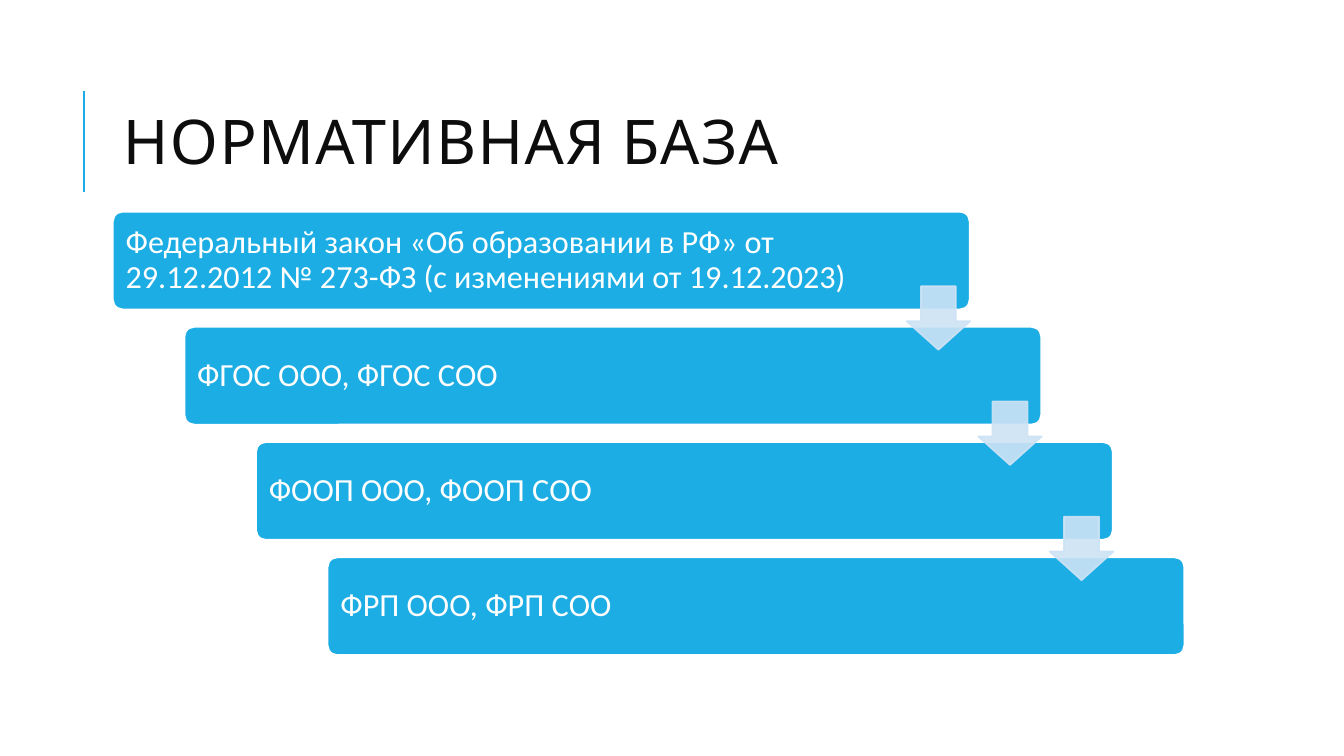
from dataclasses import dataclass

from lxml.etree import SubElement
from pptx import Presentation
from pptx.dml.color import RGBColor
from pptx.enum.shapes import MSO_CONNECTOR, MSO_SHAPE
from pptx.enum.text import MSO_ANCHOR, PP_ALIGN
from pptx.oxml.ns import qn
from pptx.util import Inches, Pt

COLORS = {"accent": "1CADE4", "white": "FFFFFF", "title": "0D0D0D", "arrow": "CDE3F5"}
TITLE = "НОРМАТИВНАЯ БАЗА"
DOCUMENTS = [
    "Федеральный закон «Об образовании в РФ» от 29.12.2012 № 273-ФЗ (с изменениями от 19.12.2023)",
    "ФГОС ООО, ФГОС СОО",
    "ФООП ООО, ФООП СОО",
    "ФРП ООО, ФРП СОО",
]


@dataclass(frozen=True)
class Staircase:
    """Grid in inches: every step moves one column right and one row down."""
    left: float = 1.12
    top: float = 2.1
    column: float = 0.71
    row: float = 1.143
    box_width: float = 8.5
    box_height: float = 0.97
    arrow_size: float = 0.63
    arrow_dx: float = 7.875
    arrow_dy: float = 0.74


@dataclass(frozen=True)
class Step:
    index: int
    text: str


def color(name: str) -> RGBColor:
    return RGBColor.from_string(COLORS[name])


def add_figure(page, kind, left: float, top: float, width: float, height: float,
               *, fill: str, line: str, adjustments: list[float]):
    shape = page.shapes.add_shape(kind, Inches(left), Inches(top), Inches(width), Inches(height))
    shape.shadow.inherit = False
    shape.fill.solid()
    shape.fill.fore_color.rgb = color(fill)
    shape.line.color.rgb = color(line)
    shape.line.width = Pt(1.25)
    for position, value in enumerate(adjustments):
        shape.adjustments[position] = value
    return shape


def write(frame, text: str, *, font: str, size: float, ink: str, line_spacing: float,
          letter_spacing: float = 0) -> None:
    frame.word_wrap = True
    frame.vertical_anchor = MSO_ANCHOR.MIDDLE
    para = frame.paragraphs[0]
    para.alignment = PP_ALIGN.LEFT
    para.line_spacing = line_spacing
    span = para.add_run()
    span.text = text
    span.font.name = font
    span.font.size = Pt(size)
    span.font.color.rgb = color(ink)
    if letter_spacing:
        span.font._element.set("spc", str(round(letter_spacing * 100)))


def add_title(page) -> None:
    title = page.shapes.title
    title.left, title.top = Inches(1.12), Inches(0.64)
    title.width, title.height = Inches(10.63), Inches(1.64)
    write(title.text_frame, TITLE, font="Cabin", size=44, ink="title",
          line_spacing=0.8, letter_spacing=1)


def add_title_rule(page) -> None:
    rule = page.shapes.add_connector(
        MSO_CONNECTOR.STRAIGHT, Inches(0.83), Inches(1.9), Inches(0.83), Inches(0.9))
    rule.line.color.rgb = color("accent")
    rule.line.width = Pt(1.5)
    SubElement(rule._element.spPr, qn("a:effectLst"))


def add_step_box(page, grid: Staircase, step: Step) -> None:
    box = add_figure(
        page, MSO_SHAPE.ROUNDED_RECTANGLE,
        grid.left + step.index * grid.column, grid.top + step.index * grid.row,
        grid.box_width, grid.box_height, fill="accent", line="white", adjustments=[0.1])
    frame = box.text_frame
    frame.margin_left = frame.margin_top = frame.margin_bottom = Inches(0.1)
    frame.margin_right = Inches(1.15)
    write(frame, step.text, font="Calibri", size=23, ink="white", line_spacing=0.9)


def add_step_arrow(page, grid: Staircase, step: Step) -> None:
    arrow = add_figure(
        page, MSO_SHAPE.DOWN_ARROW,
        grid.left + step.index * grid.column + grid.arrow_dx,
        grid.top + step.index * grid.row + grid.arrow_dy,
        grid.arrow_size, grid.arrow_size, fill="arrow", line="arrow", adjustments=[0.55, 0.45])
    for paint in arrow._element.spPr.iter(qn("a:srgbClr")):
        SubElement(paint, qn("a:alpha"), val="90000")


def main() -> None:
    deck = Presentation()
    deck.slide_width, deck.slide_height = Inches(13.333), Inches(7.5)
    page = deck.slides.add_slide(deck.slide_layouts[5])
    grid = Staircase()
    steps = [Step(index, text) for index, text in enumerate(DOCUMENTS)]
    add_title_rule(page)
    add_title(page)
    for step in steps:
        add_step_box(page, grid, step)
    for step in steps[:-1]:
        add_step_arrow(page, grid, step)
    deck.save("out.pptx")


if __name__ == "__main__":
    main()
